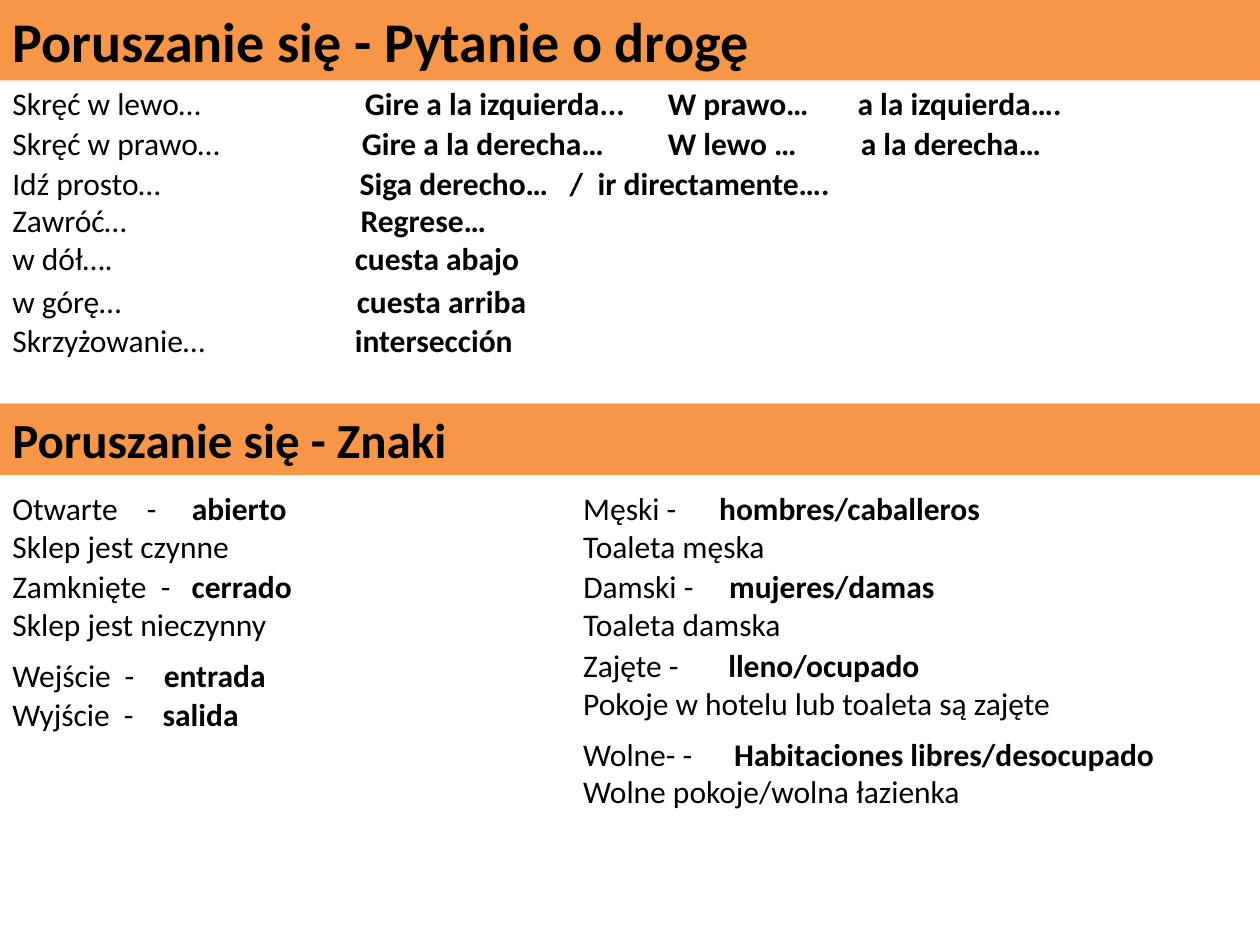
from dataclasses import dataclass

from lxml import etree
from pptx import Presentation
from pptx import util as u
from pptx.dml.color import RGBColor
from pptx.enum import shapes, text
from pptx.oxml.ns import qn

BLACK = "000000"
ORANGE = "F79646"
BODY_SIZE = 18
LINE_HEIGHT = 22
SIGNS_LEFT = 326.2


@dataclass
class Entry:
    """A Polish phrase with its tabbed Spanish equivalents, and an optional note."""
    polish: str
    spanish: str
    stops: tuple[float, ...]
    note: str = ""


@dataclass
class Group:
    left: float
    top: float
    width: float
    entries: list[Entry]


GROUPS = [
    Group(0, 44.6, 720, [
        Entry("Skręć w lewo…\t", "Gire a la izquierda...\tW prawo…\ta la izquierda….",
              (201.4, 374.5, 483))]),
    Group(0, 67.4, 720, [
        Entry("Skręć w prawo…\t", "Gire a la derecha…\tW lewo …\ta la derecha…",
              (199.7, 374.5, 484.8))]),
    Group(0, 90, 540, [
        Entry("Idź prosto…\t", "Siga derecho…\t/\tir directamente….",
              (198.5, 318.5, 334.5)),
        Entry("Zawróć…\t", "Regrese…", (199,)),
        Entry("w dół….\t", "cuesta abajo", (195.7,))]),
    Group(0, 157.7, 540, [Entry("w górę…\t", "cuesta arriba", (196.8,))]),
    Group(0, 180, 540, [Entry("Skrzyżowanie…\t", "intersección", (195.7,))]),
    Group(0, 275.8, 242, [
        Entry("Otwarte\t-\t", "abierto", (76.8, 102.5), "Sklep jest czynne")]),
    Group(0, 320.4, 186, [
        Entry("Zamknięte\t-\t", "cerrado", (84.8, 102.5), "Sklep jest nieczynny")]),
    Group(0, 371.5, 197, [Entry("Wejście\t-\t", "entrada", (64.2, 86.5))]),
    Group(0, 393.8, 174, [Entry("Wyjście\t-\t", "salida", (63.7, 85.9))]),
    Group(SIGNS_LEFT, 275.8, 382, [
        Entry("Męski -\t", "hombres/caballeros", (77.7,), "Toaleta męska")]),
    Group(SIGNS_LEFT, 320.4, 276, [
        Entry("Damski -\t", "mujeres/damas", (83.4,), "Toaleta damska")]),
    Group(SIGNS_LEFT, 365.8, 393.8, [
        Entry("Zajęte -\t", "lleno/ocupado", (82.9,),
              "Pokoje w hotelu lub toaleta są zajęte")]),
    Group(SIGNS_LEFT, 416.2, 393.8, [
        Entry("Wolne- -\t", "Habitaciones libres/desocupado", (86.3,),
              "Wolne pokoje/wolna łazienka")]),
]


def colour(hex_value: str) -> RGBColor:
    return RGBColor.from_string(hex_value)


def apply(target, values: dict) -> None:
    for name, value in values.items():
        setattr(target, name, value)


def format_frame(frame, anchor) -> None:
    apply(frame, {
        "word_wrap": True,
        "auto_size": text.MSO_AUTO_SIZE.NONE,
        "vertical_anchor": anchor,
        "margin_left": u.Pt(7.2), "margin_right": u.Pt(7.2),
        "margin_top": u.Pt(3.6), "margin_bottom": u.Pt(3.6),
    })


def add_run(paragraph, wording: str, size: float, bold: bool) -> None:
    run = paragraph.add_run()
    run.text = wording
    apply(run.font, {"name": "Calibri", "size": u.Pt(size), "bold": bold})
    run.font.color.rgb = colour(BLACK)


def set_tab_stops(paragraph, stops: tuple[float, ...]) -> None:
    tabs = etree.SubElement(paragraph._p.get_or_add_pPr(), qn("a:tabLst"))
    for stop in stops:
        etree.SubElement(tabs, qn("a:tab"), pos=str(int(u.Pt(stop))), algn="l")


def fill_heading(bar, wording: str, size: float) -> None:
    format_frame(bar.text_frame, text.MSO_ANCHOR.MIDDLE)
    bar.fill.solid()
    bar.fill.fore_color.rgb = colour(ORANGE)
    bar.line.fill.background()
    paragraph = bar.text_frame.paragraphs[0]
    paragraph.alignment = text.PP_ALIGN.LEFT
    add_run(paragraph, wording, size, True)


def add_group(slide, group: Group) -> None:
    line_count = sum(2 if entry.note else 1 for entry in group.entries)
    height = line_count * LINE_HEIGHT + 7.2
    frame = slide.shapes.add_textbox(
        u.Pt(group.left), u.Pt(group.top), u.Pt(group.width), u.Pt(height)).text_frame
    format_frame(frame, text.MSO_ANCHOR.TOP)
    for number, entry in enumerate(group.entries):
        line = frame.add_paragraph() if number else frame.paragraphs[0]
        set_tab_stops(line, entry.stops)
        add_run(line, entry.polish, BODY_SIZE, False)
        add_run(line, entry.spanish, BODY_SIZE, True)
        if entry.note:
            add_run(frame.add_paragraph(), entry.note, BODY_SIZE, False)


def main() -> None:
    deck = Presentation()
    apply(deck, {"slide_width": u.Pt(720), "slide_height": u.Pt(540)})
    title_only_layout = deck.slide_layouts[5]
    slide = deck.slides.add_slide(title_only_layout)

    title = slide.shapes.title
    apply(title, {"left": u.Pt(0), "top": u.Pt(0),
                  "width": u.Pt(720), "height": u.Pt(46)})
    fill_heading(title, "Poruszanie się - Pytanie o drogę", 32)

    signs_bar = slide.shapes.add_shape(
        shapes.MSO_SHAPE.RECTANGLE, u.Pt(0), u.Pt(230.5), u.Pt(720), u.Pt(41))
    signs_bar.shadow.inherit = False
    fill_heading(signs_bar, "Poruszanie się - Znaki", 28)

    for group in GROUPS:
        add_group(slide, group)
    deck.save("out.pptx")


if __name__ == "__main__":
    main()
